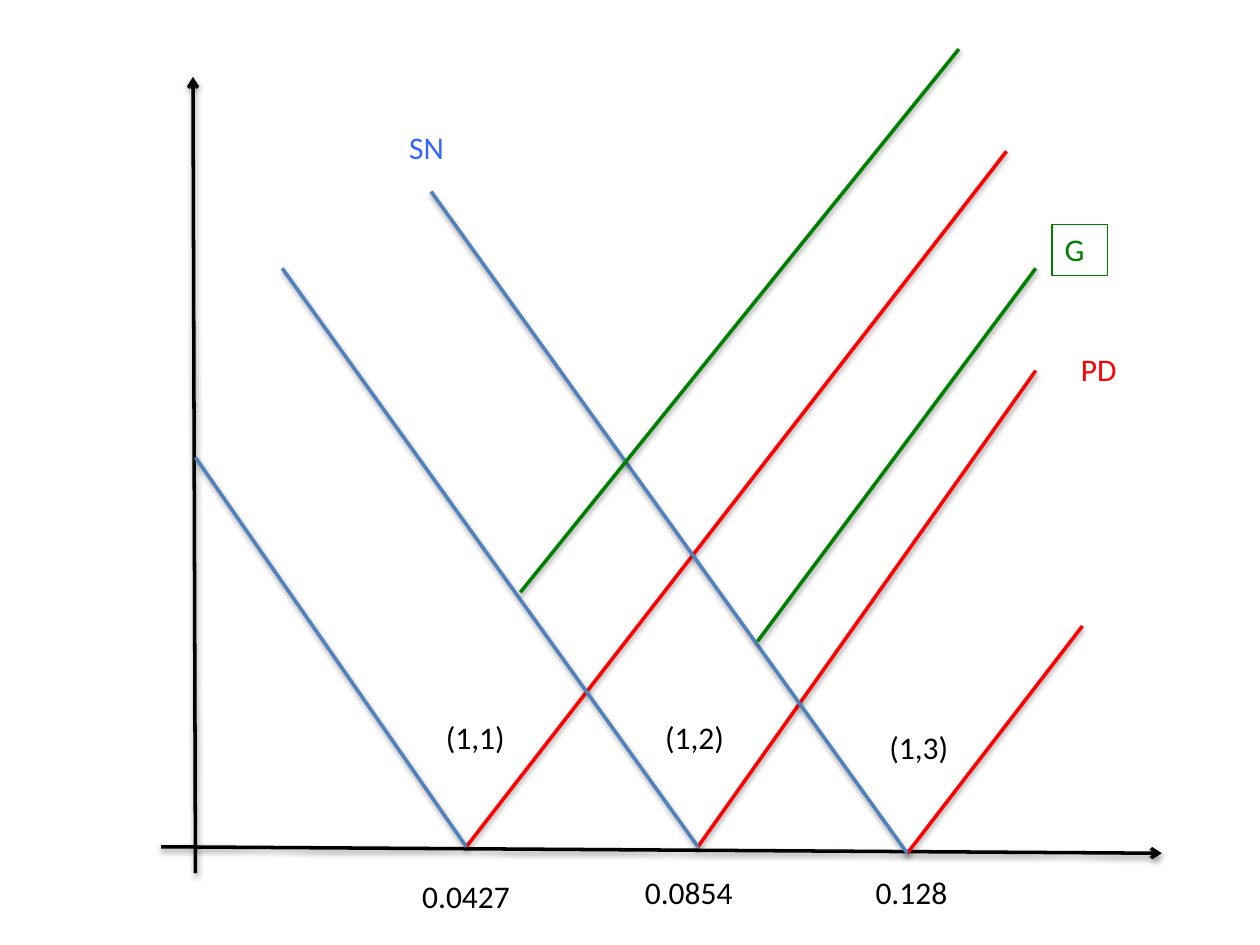
from lxml.etree import SubElement
from pptx import Presentation
from pptx.dml.color import RGBColor
from pptx.enum.shapes import MSO_CONNECTOR
from pptx.enum.text import MSO_AUTO_SIZE
from pptx.oxml.ns import qn
from pptx.util import Cm, Pt

BLACK, RED, BLUE, GREEN = "000000", "FF0000", "4F81BD", "008000"
LABEL_BLUE = "3366FF"


def color(hex_code):
    return RGBColor.from_string(hex_code)


def add_shadow(connector):
    effects = SubElement(connector._element.spPr, qn("a:effectLst"))
    shadow = SubElement(effects, qn("a:outerShdw"), blurRad="40000",
                        dist="20000", dir="5400000", rotWithShape="0")
    shade = SubElement(shadow, qn("a:srgbClr"), val=BLACK)
    SubElement(shade, qn("a:alpha"), val="38000")


def add_line(page, start, end, line_color, arrow=False):
    points = [Cm(value) for value in (*start, *end)]
    connector = page.shapes.add_connector(MSO_CONNECTOR.STRAIGHT, *points)
    connector.line.width = Pt(2)
    connector.line.color.rgb = color(line_color)
    if arrow:
        SubElement(connector.line._get_or_add_ln(), qn("a:tailEnd"), type="arrow")
    add_shadow(connector)


def add_label(page, text, left, top, width, text_color=BLACK, border=None):
    box = page.shapes.add_textbox(Cm(left), Cm(top), Cm(width), Cm(1.03))
    frame = box.text_frame
    frame.word_wrap = True
    frame.auto_size = MSO_AUTO_SIZE.SHAPE_TO_FIT_TEXT
    span = frame.paragraphs[0].add_run()
    span.text = text
    span.font.name = "Calibri"
    span.font.size = Pt(18)
    span.font.color.rgb = color(text_color)
    if border:
        box.line.color.rgb = color(border)
        box.line.width = Pt(0.75)


def main():
    deck = Presentation()
    deck.slide_width, deck.slide_height = Cm(25.4), Cm(19.05)
    page = deck.slides.add_slide(deck.slide_layouts[6])

    # Axes
    add_line(page, (3.25, 17.07), (23.42, 17.2), BLACK, arrow=True)
    add_line(page, (3.94, 17.6), (3.89, 1.55), BLACK, arrow=True)

    # PD and SN branches rise from the same points on the axis
    feet = [(9.4, 17.07), (14.07, 17.07), (18.29, 17.2)]
    pd_ends = [(20.29, 3.05), (20.88, 7.47), (21.82, 12.62)]
    sn_ends = [(3.94, 9.22), (5.69, 5.41), (8.69, 3.86)]
    for foot, end in zip(feet, pd_ends):
        add_line(page, foot, end, RED)
    for foot, end in reversed(list(zip(feet, sn_ends))):
        add_line(page, foot, end, BLUE)

    # G branches
    add_line(page, (10.49, 11.94), (19.33, 0.99), GREEN)
    add_line(page, (15.27, 12.93), (20.88, 5.41), GREEN)

    # Branch names
    add_label(page, "PD", 21.54, 6.93, 1.98, text_color=RED)
    add_label(page, "SN", 8, 2.46, 2.51, text_color=LABEL_BLUE)

    # Modes
    add_label(page, "(1,1)", 8.74, 14.35, 2.13)
    add_label(page, "(1,2)", 13.16, 14.35, 1.73)
    add_label(page, "(1,3)", 17.68, 14.55, 2.29)
    add_label(page, "G", 21.21, 4.52, 1.12, text_color=GREEN, border=GREEN)

    # Axis values
    add_label(page, "0.0427", 8.26, 17.55, 2.87)
    add_label(page, "0.0854", 12.75, 17.48, 2.87)
    add_label(page, "0.128", 17.4, 17.48, 3.2)

    deck.save("out.pptx")


if __name__ == "__main__":
    main()
